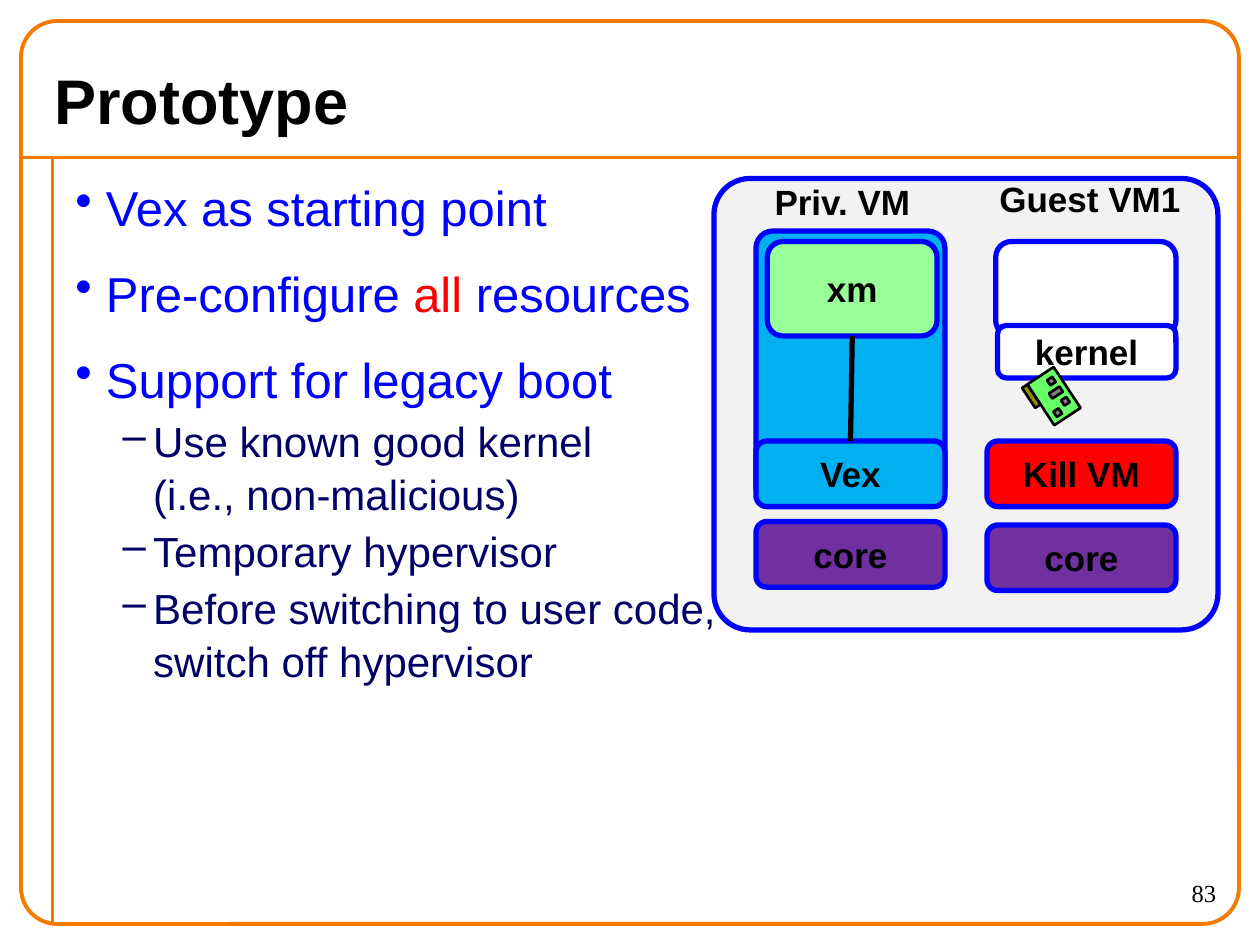
from lxml import etree
from pptx import Presentation
from pptx.dml.color import RGBColor
from pptx.enum.shapes import MSO_CONNECTOR as Link, MSO_SHAPE as Form
from pptx.enum.text import MSO_ANCHOR as Anchor, PP_ALIGN as Align
from pptx.oxml.ns import qn
from pptx.util import Pt

ORANGE, BLUE, NAVY, BLACK = "F47A00", "0000FF", "000066", "000000"
CYAN, PURPLE, RED, WHITE = "00B0F0", "7030A0", "FF0000", "FFFFFF"


def rgb(code):
    return RGBColor.from_string(code)


def box(at, fill, text="", line=BLUE, width=3, form=Form.ROUNDED_RECTANGLE):
    """Add an outlined shape at (left, top, width, height), with bold text."""
    shape = shapes.add_shape(form, *map(Pt, at))
    shape.shadow.inherit = False
    if fill:
        shape.fill.solid()
        shape.fill.fore_color.rgb = rgb(fill)
    else:
        shape.fill.background()
    shape.line.color.rgb = rgb(line)
    shape.line.width = Pt(width)
    if text:
        frame = shape.text_frame
        frame.word_wrap = False
        frame.vertical_anchor = Anchor.MIDDLE
        par = frame.paragraphs[0]
        par.text = text
        par.alignment = Align.CENTER
        font = par.font
        font.name, font.size, font.bold = "Arial", Pt(20), True
        font.color.rgb = rgb(BLACK)
    return shape


deck = Presentation()
deck.slide_width, deck.slide_height = Pt(720), Pt(540)
slide = deck.slides.add_slide(deck.slide_layouts[6])
shapes = slide.shapes

# Page frame
rules = []
for ends in [(12, 90, 708, 90), (30, 90, 30, 528)]:
    rule = shapes.add_connector(Link.STRAIGHT, *map(Pt, ends))
    rules.append((rule, ORANGE, 2.25))
page = box((12, 12, 696, 516), None, line=ORANGE, width=2.25)
page.adjustments[0] = 0.04

# Body list
body = shapes.add_textbox(Pt(36), Pt(96), Pt(396), Pt(432)).text_frame
body.word_wrap = True
items = [
    (0, [("Vex as starting point", BLUE)]),
    (0, [("Pre-configure ", BLUE), ("all", RED), (" resources", BLUE)]),
    (0, [("Support for legacy boot", BLUE)]),
    (1, [("Use known good kernel\v(i.e., non-malicious)", NAVY)]),
    (1, [("Temporary hypervisor", NAVY)]),
    (1, [("Before switching to user code,\vswitch off hypervisor", NAVY)]),
]
styles = [(28, 14, 17.5, "•"), (24, 2.4, 44.5, "–")]
for i, (level, runs) in enumerate(items):
    size, gap, left, mark = styles[level]
    par = body.add_paragraph() if i else body.paragraphs[0]
    par.level = level
    par.line_spacing = 1.05
    par.space_before = Pt(gap)
    par.font.name, par.font.size = "Arial", Pt(size)
    for text, color in runs:
        if len(runs) == 1:
            par.text = text
            par.font.color.rgb = rgb(color)
        else:
            run = par.add_run()
            run.text = text
            run.font.color.rgb = rgb(color)
    props = par._p.get_or_add_pPr()
    props.set("marL", str(Pt(left)))
    props.set("indent", str(-Pt(17.5)))
    bullet = etree.Element(qn("a:buChar"), char=mark)
    props.find(qn("a:defRPr")).addprevious(bullet)

# Machine with two virtual machines
host = box((408, 102, 288, 258), "F2F2F2")
host.adjustments[0] = 0.08
priv = box((432, 132, 108, 156), CYAN)
priv.adjustments[0] = 0.09
hyper = box((432, 252, 108, 37.5), CYAN, "Vex")
tool = box((438.5, 138, 97, 54), "99FF99", "xm")
link = shapes.add_connector(Link.STRAIGHT, 0, 0, 0, 0)
link.begin_connect(tool, 2)
link.end_connect(hyper, 0)
rules.append((link, BLACK, 3))
box((432, 298, 108, 37.5), PURPLE, "core")
box((564, 300, 108, 37.5), PURPLE, "core")
box((569, 138, 103, 54), WHITE)
box((570, 186, 102, 30), WHITE, "kernel")

for rule, color, width in rules:
    rule.line.color.rgb = rgb(color)
    rule.line.width = Pt(width)
    etree.SubElement(rule._element.spPr, qn("a:effectLst"))

# Network card
parts = [
    (593.3, 212.4, 18, 28, "66FF66"),
    (587.5, 219.6, 3.6, 13.7, "918E00"),
    (599, 216, 3.6, 3.6, "808080"),
    (607, 227.5, 3.6, 3.6, "808080"),
    (599.8, 222.5, 7.2, 3.6, "808080"),
    (602.6, 234, 3.6, 3.6, "808080"),
]
for *at, fill in parts:
    part = box(at, fill, line=BLACK, width=1.5, form=Form.RECTANGLE)
    part.rotation = 326.6

box((564, 252, 108, 37.5), RED, "Kill VM")

# Title, labels and page number
LEFT, RIGHT = Align.LEFT, Align.RIGHT
labels = [
    ("Prototype", (24, 30, 635, 54), "Arial", 36, True, LEFT, Anchor.MIDDLE),
    ("Guest VM1", (564, 98, 119, 31.5), "Arial", 20, True, LEFT, Anchor.TOP),
    ("Priv. VM", (435.5, 99.5, 93, 31.5), "Arial", 20, True, LEFT, Anchor.TOP),
    ("83", (630, 498, 72, 30), "Times New Roman", 14, False, RIGHT, Anchor.TOP),
]
for text, at, face, size, bold, side, anchor in labels:
    frame = shapes.add_textbox(*map(Pt, at)).text_frame
    frame.word_wrap = "VM" not in text
    frame.vertical_anchor = anchor
    par = frame.paragraphs[0]
    par.text = text
    par.alignment = side
    par.font.name, par.font.size, par.font.bold = face, Pt(size), bold
    par.font.color.rgb = rgb(BLACK)

deck.save("out.pptx")
